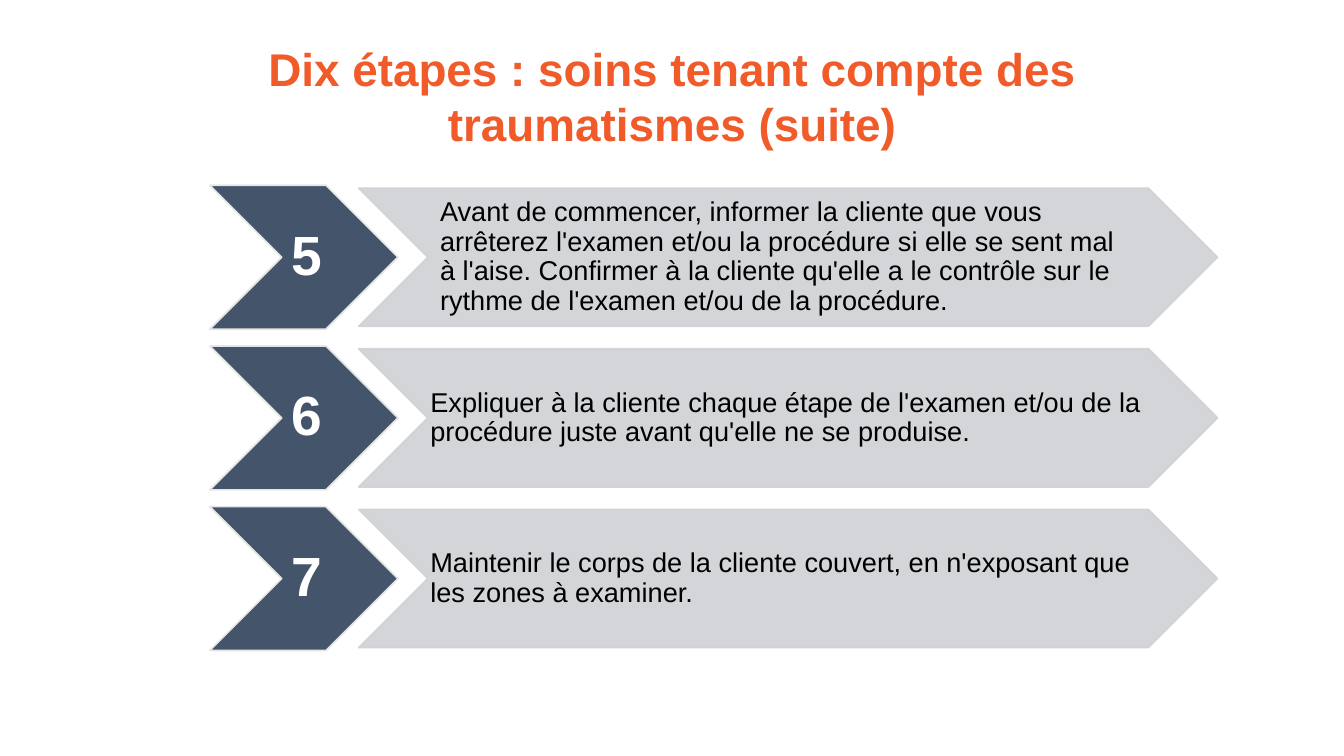
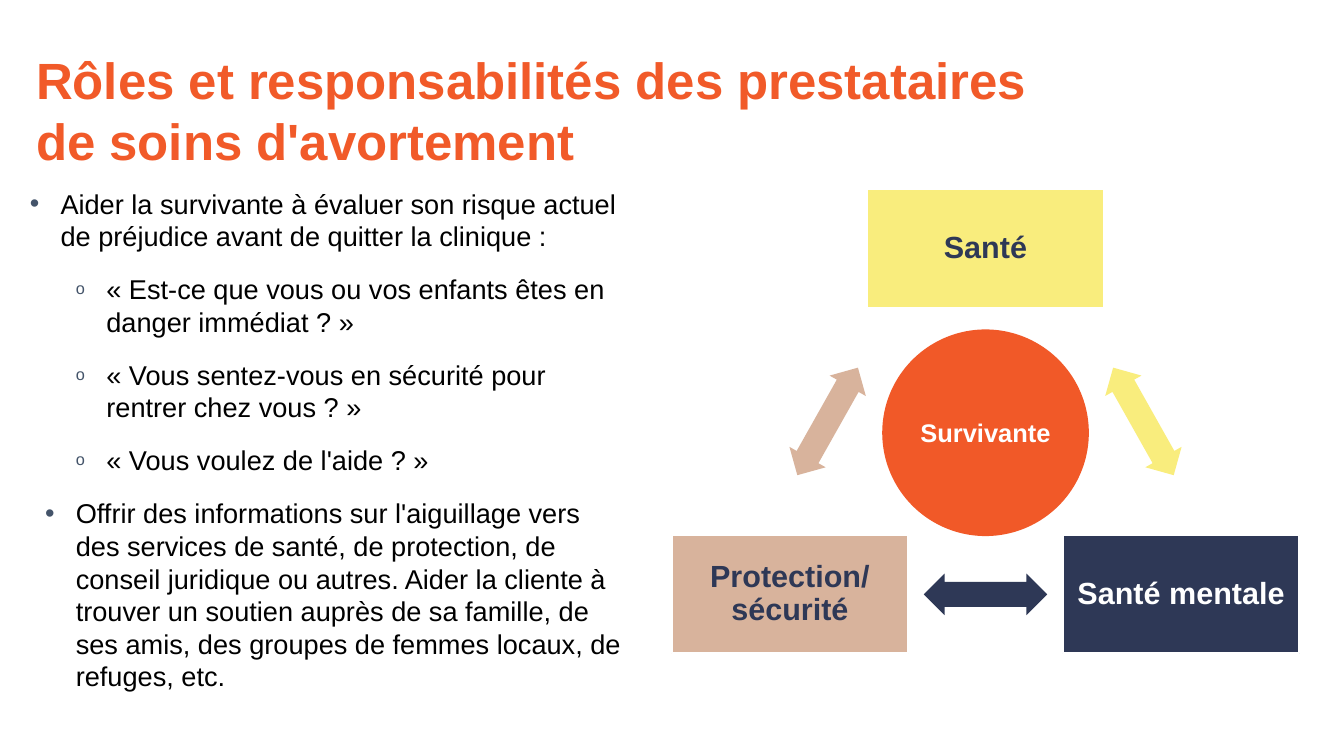
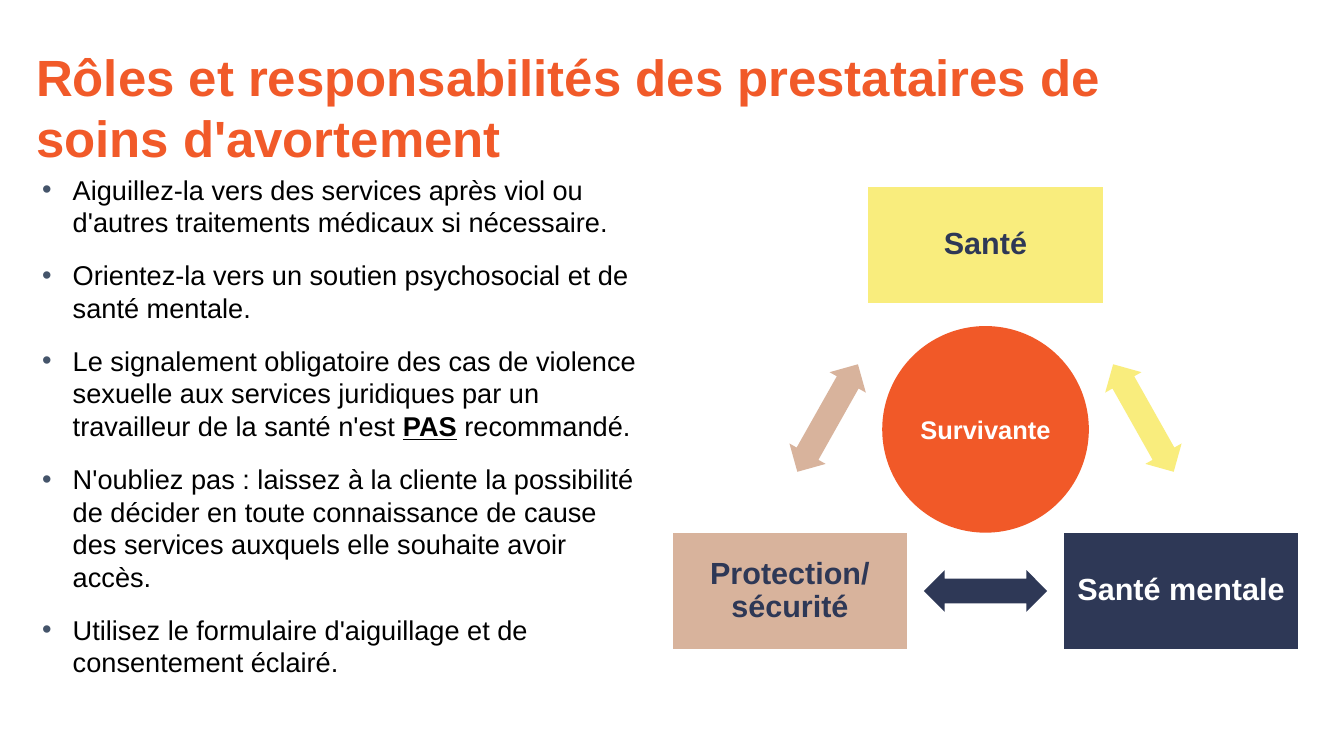
from dataclasses import dataclass

from lxml.etree import SubElement
from pptx import Presentation
from pptx.dml.color import RGBColor
from pptx.enum.shapes import MSO_SHAPE as Shape
from pptx.enum.text import MSO_ANCHOR as Anchor, MSO_AUTO_SIZE as AutoSize, PP_ALIGN as Align
from pptx.oxml.ns import qn
from pptx.util import Pt

FONT = "Arial"
COLORS = {
    "title": "F15A29",
    "circle": "F15928",
    "slate": "44546A",
    "pale": "E7E6E6",
    "gray": "CFD1D4",
    "yellow": "F9ED7D",
    "navy": "2E3856",
    "tan": "D8B39C",
    "white": "FFFFFF",
    "black": "000000",
}
ROLES_TITLE = "Rôles et responsabilités des prestataires de soins d'avortement"
LEVEL_INDENTS = {1: 36, 2: 54, 3: 90}
HANGING = 36


@dataclass(frozen=True)
class Box:
    left: float
    top: float
    width: float
    height: float

    @classmethod
    def centered(cls, x: float, y: float, width: float, height: float) -> "Box":
        return cls(x - width / 2, y - height / 2, width, height)

    def lengths(self) -> tuple:
        return Pt(self.left), Pt(self.top), Pt(self.width), Pt(self.height)


@dataclass(frozen=True)
class Step:
    number: str
    text: str
    insets: tuple = (3, 1.5, 0, 1.5)


@dataclass(frozen=True)
class Bullet:
    """One list item; text between asterisks is bold and underlined."""
    text: str
    level: int = 1


@dataclass(frozen=True)
class Service:
    """A labelled box, placed from the diagram's top centre."""
    label: str
    dx: float
    dy: float
    fill: str
    color: str


@dataclass(frozen=True)
class Arrow:
    """A double arrow, its centre placed from the diagram's top centre."""
    dx: float
    dy: float
    rotation: float
    fill: str


STEPS = (
    Step("5", "Avant de commencer, informer la cliente que vous arrêterez l'examen et/ou la "
              "procédure si elle se sent mal à l'aise. Confirmer à la cliente qu'elle a le "
              "contrôle sur le rythme de l'examen et/ou de la procédure.", (14.4,) * 4),
    Step("6", "Expliquer à la cliente chaque étape de l'examen et/ou de la procédure juste "
              "avant qu'elle ne se produise."),
    Step("7", "Maintenir le corps de la cliente couvert, en n'exposant que les zones à "
              "examiner."),
)
SAFETY_BULLETS = (
    Bullet("Aider la survivante à évaluer son risque actuel de préjudice avant de quitter "
           "la clinique :"),
    Bullet("« Est-ce que vous ou vos enfants êtes en danger immédiat ? »", 3),
    Bullet("« Vous sentez-vous en sécurité pour rentrer chez vous ? »", 3),
    Bullet("« Vous voulez de l'aide ? »", 3),
    Bullet("Offrir des informations sur l'aiguillage vers des services de santé, de "
           "protection, de conseil juridique ou autres. Aider la cliente à trouver un "
           "soutien auprès de sa famille, de ses amis, des groupes de femmes locaux, de "
           "refuges, etc.", 2),
)
REFERRAL_BULLETS = (
    Bullet("Aiguillez-la vers des services après viol ou d'autres traitements médicaux si "
           "nécessaire."),
    Bullet("Orientez-la vers un soutien psychosocial et de santé mentale."),
    Bullet("Le signalement obligatoire des cas de violence sexuelle aux services juridiques "
           "par un travailleur de la santé n'est *PAS* recommandé."),
    Bullet("N'oubliez pas : laissez à la cliente la possibilité de décider en toute "
           "connaissance de cause des services auxquels elle souhaite avoir accès."),
    Bullet("Utilisez le formulaire d'aiguillage et de consentement éclairé."),
)

DIAGRAM_CENTER = 1161
SERVICE_W, SERVICE_H = 278.6, 139
SIDE_DX, LOWER_DY = 230.4, 407.5
SERVICES = (
    Service("Santé", 0, 0, "yellow", "navy"),
    Service("Santé mentale", SIDE_DX, LOWER_DY, "navy", "white"),
    Service("Protection/\nsécurité", -SIDE_DX, LOWER_DY, "tan", "navy"),
)
ARROW_DX, ARROW_DY = 186, (LOWER_DY + SERVICE_H) / 2
ARROWS = (
    Arrow(ARROW_DX, ARROW_DY, 60.6, "yellow"),
    Arrow(0, LOWER_DY + SERVICE_H / 2, 180, "navy"),
    Arrow(-ARROW_DX, ARROW_DY, 299.4, "tan"),
)


def rgb(name: str) -> RGBColor:
    return RGBColor.from_string(COLORS[name])


def set_frame(tf, insets: tuple, anchor) -> None:
    tf.word_wrap = True
    tf.auto_size = AutoSize.NONE
    tf.vertical_anchor = anchor
    tf.margin_left, tf.margin_top, tf.margin_right, tf.margin_bottom = map(Pt, insets)


def write(p, text: str, *, size: float, color: str, bold: bool = False,
          align=Align.LEFT, spacing: float | None = None) -> None:
    p.alignment = align
    if spacing:
        p.line_spacing = spacing
    for i, part in enumerate(text.split("*")):
        strong = i % 2 == 1
        for j, line in enumerate(part.split("\n")):
            if j:
                p.add_line_break()
            r = p.add_run()
            r.text = line
            r.font.name = FONT
            r.font.size = Pt(size)
            r.font.bold = bold or strong
            r.font.underline = strong or None
            r.font.color.rgb = rgb(color)


def set_alpha(color_parent, percent: int) -> None:
    for clr in color_parent.iter(qn("a:srgbClr")):
        SubElement(clr, qn("a:alpha")).set("val", str(percent * 1000))


def add_shape(slide, kind, box: Box, fill: str, line: str | None = None):
    sp = slide.shapes.add_shape(kind, *box.lengths())
    sp.shadow.inherit = False
    sp.fill.solid()
    sp.fill.fore_color.rgb = rgb(fill)
    if line:
        sp.line.color.rgb = rgb(line)
        sp.line.width = Pt(2)
    else:
        sp.line.fill.background()
    return sp


def add_title_slide(prs, title: str, box: Box, size: float, align=Align.LEFT):
    slide = prs.slides.add_slide(prs.slide_layouts[5])
    sp = slide.shapes.title
    sp.left, sp.top, sp.width, sp.height = box.lengths()
    set_frame(sp.text_frame, (7.2,) * 4, Anchor.TOP)
    write(sp.text_frame.paragraphs[0], title, size=size, color="title", bold=True, align=align)
    return slide


def add_step(slide, step: Step, top: float) -> None:
    height, text_height = 169.6, 162.7
    number = add_shape(slide, Shape.CHEVRON, Box(247, top, 221.8, height), "slate", "pale")
    set_frame(number.text_frame, (6.5, 3.6, 0, 3.6), Anchor.MIDDLE)
    write(number.text_frame.paragraphs[0], step.number, size=65, color="white", bold=True,
          align=Align.CENTER, spacing=0.9)

    text_top = top + (height - text_height) / 2
    band = add_shape(slide, Shape.CHEVRON, Box(422.6, text_top, 1011.6, text_height),
                     "gray", "gray")
    set_alpha(band._element.spPr, 90)
    set_frame(band.text_frame, step.insets, Anchor.MIDDLE)
    write(band.text_frame.paragraphs[0], step.text, size=32, color="black", spacing=0.9)


def set_bullet(p, level: int) -> None:
    p.level = level
    pPr = p._p.get_or_add_pPr()
    pPr.set("marL", str(Pt(LEVEL_INDENTS[level])))
    pPr.set("indent", str(-Pt(HANGING)))
    clr = SubElement(pPr, qn("a:buClr"))
    SubElement(clr, qn("a:srgbClr")).set("val", COLORS["slate"])
    if level == 3:
        SubElement(pPr, qn("a:buSzPct")).set("val", "60000")
    SubElement(pPr, qn("a:buFont")).set("typeface", FONT)
    SubElement(pPr, qn("a:buChar")).set("char", "o" if level == 3 else "•")


def add_bullets(slide, bullets: tuple, box: Box) -> None:
    tf = slide.shapes.add_textbox(*box.lengths()).text_frame
    set_frame(tf, (0,) * 4, Anchor.TOP)
    for i, bullet in enumerate(bullets):
        p = tf.add_paragraph() if i else tf.paragraphs[0]
        set_bullet(p, bullet.level)
        p.space_after = Pt(24)
        write(p, bullet.text, size=32, color="black")


def add_service_diagram(slide, top: float) -> None:
    for s in SERVICES:
        box = Box(DIAGRAM_CENTER + s.dx - SERVICE_W / 2, top + s.dy, SERVICE_W, SERVICE_H)
        sp = add_shape(slide, Shape.RECTANGLE, box, s.fill, "white")
        set_frame(sp.text_frame, (10.8,) * 4, Anchor.MIDDLE)
        write(sp.text_frame.paragraphs[0], s.label, size=36, color=s.color, bold=True,
              align=Align.CENTER, spacing=0.9)
    for a in ARROWS:
        box = Box.centered(DIAGRAM_CENTER + a.dx, top + a.dy, 145.4, 49)
        sp = add_shape(slide, Shape.LEFT_RIGHT_ARROW, box, a.fill)
        sp.adjustments[0], sp.adjustments[1] = 0.6, 0.5
        sp.rotation = a.rotation
    circle = add_shape(slide, Shape.OVAL,
                       Box.centered(DIAGRAM_CENTER, top + 286.6, 243.4, 243.4), "circle")
    set_frame(circle.text_frame, (7.2, 3.6, 7.2, 3.6), Anchor.MIDDLE)
    write(circle.text_frame.paragraphs[0], "Survivante", size=30, color="white", bold=True,
          align=Align.CENTER)


def main() -> None:
    prs = Presentation()
    prs.slide_width, prs.slide_height = Pt(1583.3), Pt(890.6)

    slide = add_title_slide(prs, "Dix étapes : soins tenant compte des traumatismes (suite)",
                            Box(239.8, 40.3, 1103.8, 133.2), 54, Align.CENTER)
    for i, step in enumerate(STEPS):
        add_step(slide, step, 218.2 + 189.3 * i)

    slide = add_title_slide(prs, ROLES_TITLE, Box(35.3, 50.4, 1211.8, 217.4), 60)
    add_bullets(slide, SAFETY_BULLETS, Box(35.3, 220.3, 706.3, 625))
    add_service_diagram(slide, 223.2)

    slide = add_title_slide(prs, ROLES_TITLE, Box(35.3, 46.1, 1440.7, 217.4), 60)
    add_bullets(slide, REFERRAL_BULLETS, Box(49.7, 203.8, 706.3, 625))
    add_service_diagram(slide, 219.2)

    prs.save("out.pptx")


if __name__ == "__main__":
    main()
